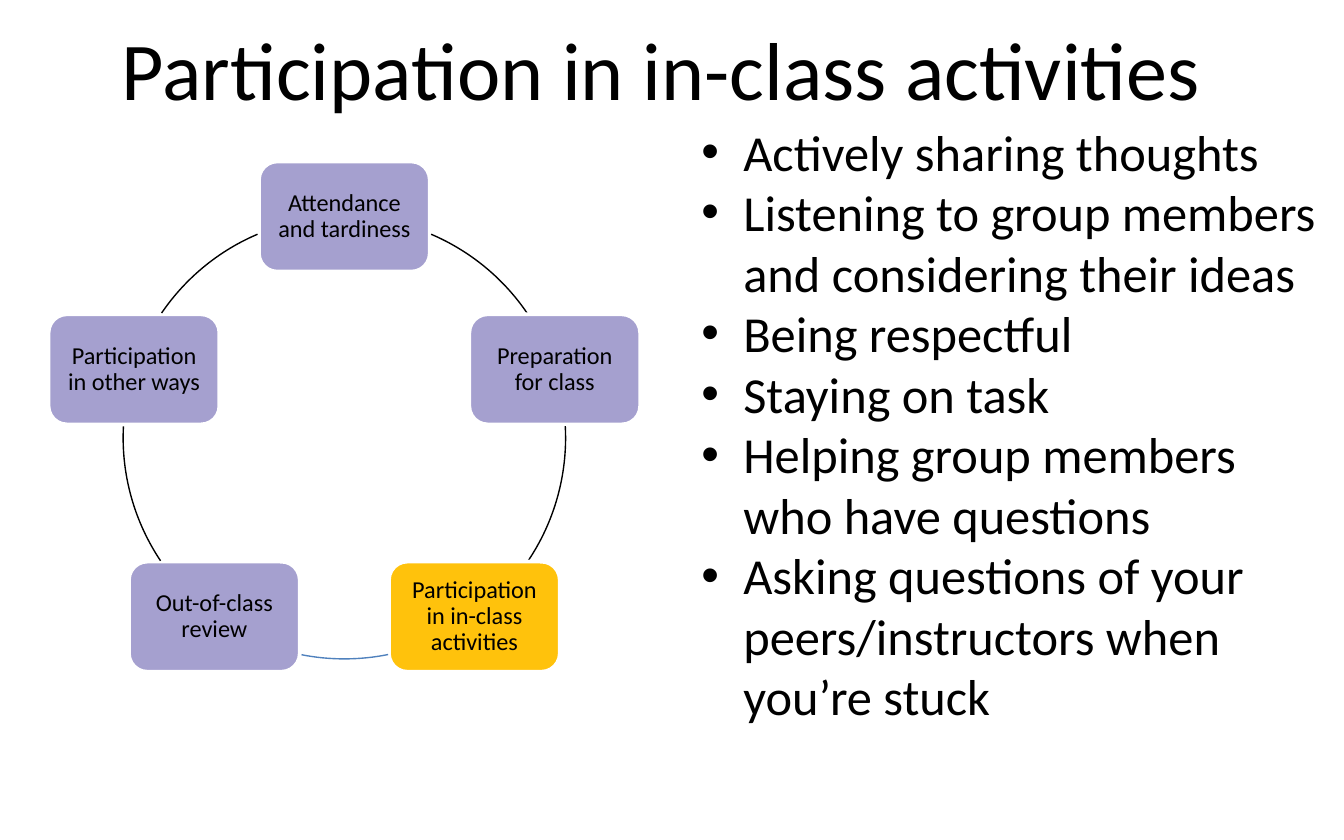
"""Build the slide on participation in in-class activities."""
from math import cos, radians, sin

from pptx import Presentation
from pptx.dml.color import RGBColor
from pptx.enum.shapes import MSO_SHAPE as Shape
from pptx.enum.text import MSO_ANCHOR as Anchor, MSO_AUTO_SIZE as Fit, PP_ALIGN as Align
from pptx.oxml.ns import qn
from pptx.util import Pt
from lxml.etree import SubElement

BLACK = RGBColor(0x00, 0x00, 0x00)
WHITE = RGBColor(0xFF, 0xFF, 0xFF)
LILAC = RGBColor(0xA5, 0xA0, 0xCF)
GOLD = RGBColor(0xFF, 0xC2, 0x0C)
BLUE = RGBColor(0x4F, 0x81, 0xBD)
FONT = "Calibri"

TITLE = "Participation in in-class activities"
POINTS = [
    "Actively sharing thoughts",
    "Listening to group members and considering their ideas",
    "Being respectful",
    "Staying on task",
    "Helping group members who have questions",
    "Asking questions of your peers/instructors when you’re stuck",
]
NODES = [
    ("Attendance and tardiness", LILAC),
    ("Preparation for class", LILAC),
    ("Participation in in-class activities", GOLD),
    ("Out-of-class review", LILAC),
    ("Participation in other ways", LILAC),
]
ARCS = [
    (293.1, 325.7, BLACK),
    (357, 33.8, BLACK),
    (78.6, 101.4, BLUE),
    (146.2, 183, BLACK),
    (214.3, 246.9, BLACK),
]
MID_X, MID_Y, RADIUS = 184.5, 234.5, 118.5
NODE_W, NODE_H = 91.5, 59


def place(shape, left, top, width, height):
    shape.left, shape.top = Pt(left), Pt(top)
    shape.width, shape.height = Pt(width), Pt(height)


def style(para, size):
    for run in para.runs:
        run.font.name, run.font.size = FONT, Pt(size)
        run.font.color.rgb = BLACK


def add_title(slide):
    title = slide.shapes.title
    place(title, 15, -1.5, 679, 75)
    frame = title.text_frame
    frame.text = TITLE
    frame.auto_size = Fit.NONE
    frame.vertical_anchor = Anchor.MIDDLE
    frame.paragraphs[0].alignment = Align.CENTER
    style(frame.paragraphs[0], 44)


def add_points(slide):
    body = slide.placeholders[1]
    place(body, 368.5, 61, 351.5, 334)
    frame = body.text_frame
    frame.text = "\n".join(POINTS)
    frame.auto_size = Fit.NONE
    frame.vertical_anchor = Anchor.TOP
    for para in frame.paragraphs:
        props = para._p.get_or_add_pPr()
        props.set("marL", str(Pt(22.5)))
        props.set("indent", str(-Pt(22.5)))
        SubElement(props, qn("a:buFont")).set("typeface", "Arial")
        SubElement(props, qn("a:buChar")).set("char", "•")
        para.space_before = Pt(0)
        style(para, 27)


def add_arc(slide, start, end, color):
    arc = slide.shapes.add_shape(
        Shape.ARC, Pt(MID_X - RADIUS), Pt(MID_Y - RADIUS), Pt(2 * RADIUS), Pt(2 * RADIUS)
    )
    arc.adjustments[0], arc.adjustments[1] = start * 0.6, end * 0.6
    arc.shadow.inherit = False
    arc.fill.background()
    arc.line.color.rgb = color
    arc.line.width = Pt(0.75)


def add_node(slide, angle, label, color):
    left = MID_X + RADIUS * cos(radians(angle)) - NODE_W / 2
    top = MID_Y + RADIUS * sin(radians(angle)) - NODE_H / 2
    node = slide.shapes.add_shape(
        Shape.ROUNDED_RECTANGLE, Pt(left), Pt(top), Pt(NODE_W), Pt(NODE_H)
    )
    node.shadow.inherit = False
    node.fill.solid()
    node.fill.fore_color.rgb = color
    node.line.color.rgb = WHITE
    node.line.width = Pt(2)
    frame = node.text_frame
    frame.text = label
    frame.word_wrap = True
    frame.vertical_anchor = Anchor.MIDDLE
    frame.margin_left = frame.margin_right = Pt(3.5)
    frame.margin_top = frame.margin_bottom = Pt(3.5)
    para = frame.paragraphs[0]
    para.alignment = Align.CENTER
    para.line_spacing = 0.9
    style(para, 13)


def main():
    deck = Presentation()
    deck.slide_width, deck.slide_height = Pt(720), Pt(450)
    slide = deck.slides.add_slide(deck.slide_layouts[1])
    add_title(slide)
    for i, (node, arc) in enumerate(zip(NODES, ARCS)):
        add_node(slide, 360 / len(NODES) * i - 90, *node)
        add_arc(slide, *arc)
    add_points(slide)
    deck.save("out.pptx")


if __name__ == "__main__":
    main()
